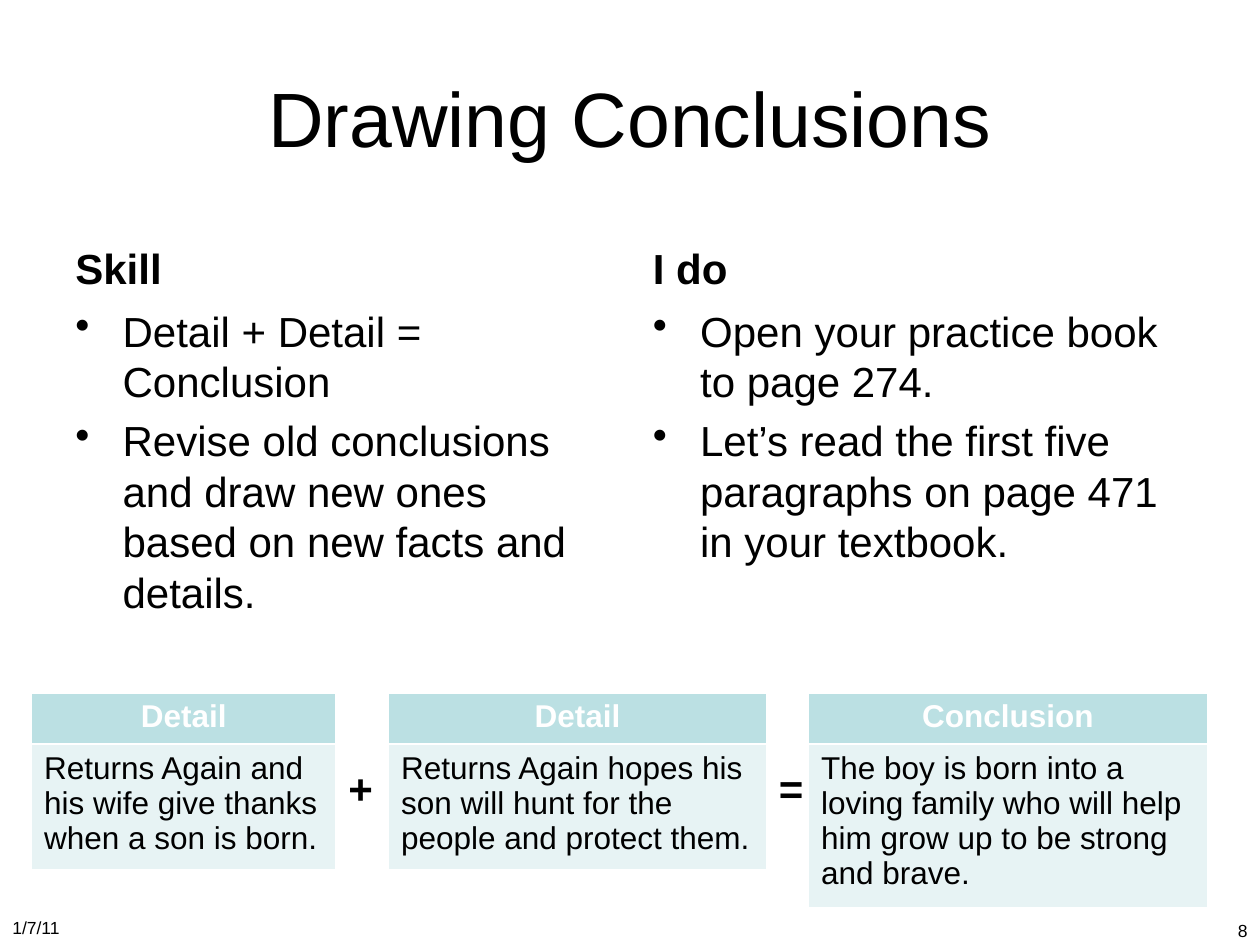
from lxml.etree import SubElement
from pptx import Presentation
from pptx.dml.color import RGBColor
from pptx.enum.text import MSO_ANCHOR, PP_ALIGN
from pptx.oxml.ns import qn
from pptx.util import Emu, Pt

EMU_PER_PX = 9525
BLACK, WHITE = "000000", "FFFFFF"
HEADER_FILL, BODY_FILL = "BBE0E3", "E7F3F4"
BULLET_INDENT = 36
HEADING_HEIGHT = 67
ROW_HEIGHT = 39


def px(length):
    return Emu(length * EMU_PER_PX)


def color(value):
    return RGBColor.from_string(value)


def add_bullet(paragraph):
    properties = paragraph._p.get_or_add_pPr()
    properties.set("marL", str(px(BULLET_INDENT)))
    properties.set("indent", str(px(-BULLET_INDENT)))
    SubElement(properties, qn("a:buChar"), char="•")


def write_text(frame, *texts, size=24, bold=False, fill=BLACK,
               align=PP_ALIGN.LEFT, bullets=False, space=0):
    for index, text in enumerate(texts):
        paragraph = frame.add_paragraph() if index else frame.paragraphs[0]
        paragraph.text = text
        paragraph.alignment = align
        if bullets:
            add_bullet(paragraph)
        if index:
            paragraph.space_before = Pt(space)
        font = paragraph.font
        font.name, font.size, font.bold = "Arial", Pt(size), bold
        font.color.rgb = color(fill)


def add_text(slide, box, *texts, anchor=MSO_ANCHOR.TOP, wrap=True, **text_format):
    frame = slide.shapes.add_textbox(*map(px, box)).text_frame
    frame.word_wrap = wrap
    frame.vertical_anchor = anchor
    write_text(frame, *texts, **text_format)


def add_column(slide, box, heading, points):
    left, top, width, height = box
    add_text(slide, (left, top, width, HEADING_HEIGHT), heading,
             anchor=MSO_ANCHOR.BOTTOM, bold=True)
    add_text(slide, (left, top + HEADING_HEIGHT, width, height - HEADING_HEIGHT),
             *points, bullets=True, space=5)


def add_card(slide, box, heading, body):
    table = slide.shapes.add_table(2, 1, *map(px, box)).table
    header_cell, body_cell = table.cell(0, 0), table.cell(1, 0)
    for cell, fill in ((header_cell, HEADER_FILL), (body_cell, BODY_FILL)):
        cell.fill.solid()
        cell.fill.fore_color.rgb = color(fill)
    write_text(header_cell.text_frame, heading, size=18, bold=True, fill=WHITE,
               align=PP_ALIGN.CENTER)
    write_text(body_cell.text_frame, body, size=18)


def add_equation(slide, left, top):
    cards = (
        (0, 232, "Detail", "Returns Again and his wife give thanks when a son is born."),
        (272, 288, "Detail",
         "Returns Again hopes his son will hunt for the people and protect them."),
        (592, 304, "Conclusion",
         "The boy is born into a loving family who will help him grow up "
         "to be strong and brave."),
    )
    for offset, width, heading, body in cards:
        add_card(slide, (left + offset, top, width, 2 * ROW_HEIGHT), heading, body)
    for (offset, width, *_), operator in zip(cards, "+="):
        add_text(slide, (left + offset + width, top + 48, 38, 48), operator,
                 bold=True, wrap=False)


def add_footer(slide, left, top, width):
    add_text(slide, (left, top, 224, 26), "1/7/11", size=10)
    add_text(slide, (left + width - 128, top + 2, 128, 24), "8", size=10,
             align=PP_ALIGN.RIGHT)


def main():
    presentation = Presentation()
    presentation.slide_width, presentation.slide_height = px(960), px(720)
    slide = presentation.slides.add_slide(presentation.slide_layouts[6])
    add_text(slide, (48, 29, 864, 120), "Drawing Conclusions",
             anchor=MSO_ANCHOR.MIDDLE, size=44, align=PP_ALIGN.CENTER)
    add_column(slide, (48, 161, 424, 319), "Skill", (
        "Detail + Detail = Conclusion",
        "Revise old conclusions and draw new ones based on new facts and details."))
    add_column(slide, (488, 161, 424, 319), "I do", (
        "Open your practice book to page 274.",
        "Let’s read the first five paragraphs on page 471 in your textbook."))
    add_equation(slide, 24, 528)
    add_footer(slide, 0, 694, 960)
    presentation.save("out.pptx")


if __name__ == "__main__":
    main()
